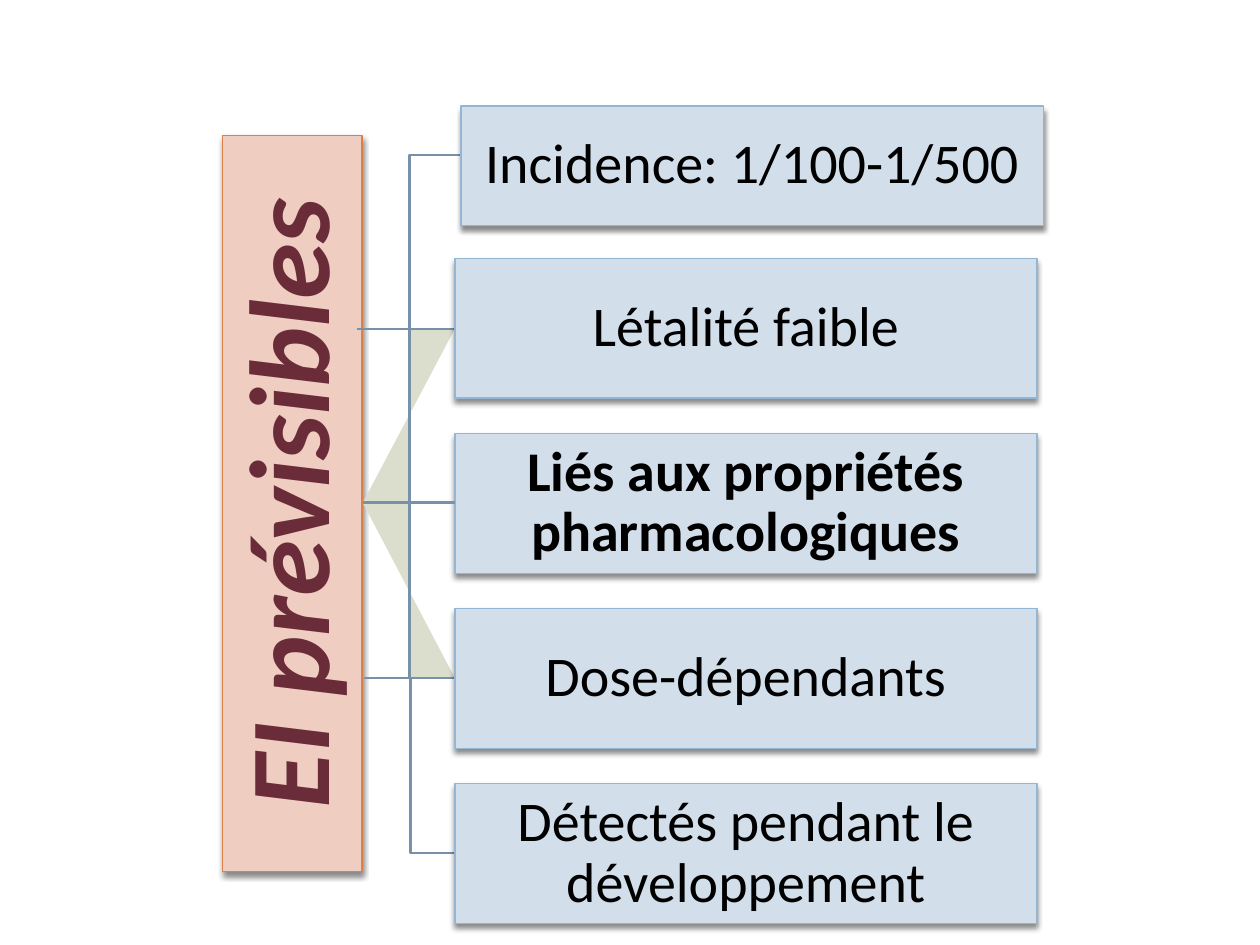
from dataclasses import dataclass
from typing import Any, Optional

import lxml.etree
import pptx
import pptx.dml.color
import pptx.enum.shapes
import pptx.enum.text
import pptx.oxml.ns
import pptx.util

SCALE = 9144
LINE_COLOUR = "7792A8"
WEDGE_COLOUR = "DBDDCD"
BOX_WIDTH, BOX_HEIGHT, BOX_LEFT = 462, 111, 361
FIRST_ROW, ROW_PITCH = 205, 139
qn = pptx.oxml.ns.qn


@dataclass
class Panel:
    text: str
    left: int
    top: int
    width: int
    height: int
    fill: str
    line: str
    inset: int
    font: dict[str, Any]


@dataclass
class Elbow:
    start: tuple[int, int]
    end: tuple[int, int]
    fill: Optional[str] = None


def px(length: int) -> int:
    return pptx.util.Emu(length * SCALE)


def colour(value: str) -> pptx.dml.color.RGBColor:
    return pptx.dml.color.RGBColor.from_string(value)


def assign(target: Any, values: dict[str, Any]) -> None:
    for name, value in values.items():
        setattr(target, name, value)


def style_line(line: Any, value: str, width: float) -> None:
    line.color.rgb = colour(value)
    line.width = pptx.util.Pt(width)


def add_shadow(shape: Any) -> None:
    shape.shadow.inherit = False
    effects = shape._element.spPr.find(qn("a:effectLst"))
    shadow = lxml.etree.SubElement(effects, qn("a:outerShdw"), {
        "blurRad": "38100", "dist": "30480", "dir": "5400000", "rotWithShape": "0"})
    shade = lxml.etree.SubElement(shadow, qn("a:srgbClr"), val="000000")
    lxml.etree.SubElement(shade, qn("a:alpha"), val="45000")


def format_panel(shape: Any, panel: Panel) -> Any:
    assign(shape, {"left": px(panel.left), "top": px(panel.top),
                   "width": px(panel.width), "height": px(panel.height)})
    shape.fill.solid()
    shape.fill.fore_color.rgb = colour(panel.fill)
    style_line(shape.line, panel.line, 0.79)
    add_shadow(shape)
    frame = shape.text_frame
    assign(frame, {
        "word_wrap": True,
        "auto_size": pptx.enum.text.MSO_AUTO_SIZE.NONE,
        "vertical_anchor": pptx.enum.text.MSO_ANCHOR.MIDDLE,
        **{f"margin_{side}": px(panel.inset) for side in ("left", "top", "right", "bottom")},
    })
    para = frame.paragraphs[0]
    assign(para, {"alignment": pptx.enum.text.PP_ALIGN.CENTER, "line_spacing": 0.9})
    span = para.add_run()
    span.text = panel.text
    values = dict(panel.font)
    span.font.color.rgb = colour(values.pop("colour"))
    assign(span.font, {"name": "Calibri", **values})
    return shape


def add_box(page: Any, text: str, left: int, top: int, height: int, bold: bool = False) -> Any:
    panel = Panel(text, left, top, BOX_WIDTH, height, "D2DEEA", "94B6D2", 2,
                  {"size": pptx.util.Pt(32), "bold": bold, "colour": "000000"})
    shape = page.shapes.add_shape(pptx.enum.shapes.MSO_SHAPE.RECTANGLE, 0, 0, 0, 0)
    return format_panel(shape, panel)


def add_elbow(page: Any, elbow: Elbow) -> None:
    middle = (elbow.start[0] + elbow.end[0] + 1) // 2
    builder = page.shapes.build_freeform(*elbow.start, scale=SCALE)
    builder.add_line_segments(
        [(middle, elbow.start[1]), (middle, elbow.end[1]), elbow.end], close=False)
    shape = builder.convert_to_shape()
    shape.shadow.inherit = False
    if elbow.fill:
        shape.fill.solid()
        shape.fill.fore_color.rgb = colour(elbow.fill)
    else:
        shape.fill.background()
    style_line(shape.line, LINE_COLOUR, 1.5)


def add_link(page: Any, banner: Any, box: Any, start: tuple[int, int], end: tuple[int, int]) -> None:
    link = page.shapes.add_connector(
        pptx.enum.shapes.MSO_CONNECTOR.STRAIGHT, *map(px, start + end))
    link.begin_connect(banner, 2)
    link.end_connect(box, 1)
    assign(link, {"begin_x": px(start[0]), "begin_y": px(start[1]),
                  "end_x": px(end[0]), "end_y": px(end[1])})
    style_line(link.line, LINE_COLOUR, 1.5)
    lxml.etree.SubElement(link._element.spPr, qn("a:effectLst"))


def main() -> None:
    deck = pptx.Presentation()
    assign(deck, {"slide_width": px(1000), "slide_height": px(750)})
    page = deck.slides.add_slide(deck.slide_layouts[5])

    banner = format_panel(page.shapes.title, Panel(
        "EI prévisibles", -60, 344, 584, BOX_HEIGHT, "EFCDC1", "DD8047", 5,
        {"size": pptx.util.Pt(65), "bold": True, "italic": True, "colour": "6B2C3A"}))
    banner.rotation = 270

    hub = (288, 399)
    for elbow in (
        Elbow(hub, (BOX_LEFT, 538), WEDGE_COLOUR),
        Elbow(hub, (BOX_LEFT, 261), WEDGE_COLOUR),
        Elbow((289, 538), (362, 677)),
        Elbow((366, 123), (283, 261)),
    ):
        add_elbow(page, elbow)

    add_box(page, "Incidence: 1/100-1/500", 366, 84, 95)
    features = ("Létalité faible", "Liés aux propriétés pharmacologiques",
                "Dose-dépendants", "Détectés pendant le développement")
    boxes = [add_box(page, text, BOX_LEFT, FIRST_ROW + row * ROW_PITCH, BOX_HEIGHT, row == 1)
             for row, text in enumerate(features)]
    add_link(page, banner, boxes[1], hub, (BOX_LEFT, hub[1]))

    deck.save("out.pptx")


if __name__ == "__main__":
    main()
